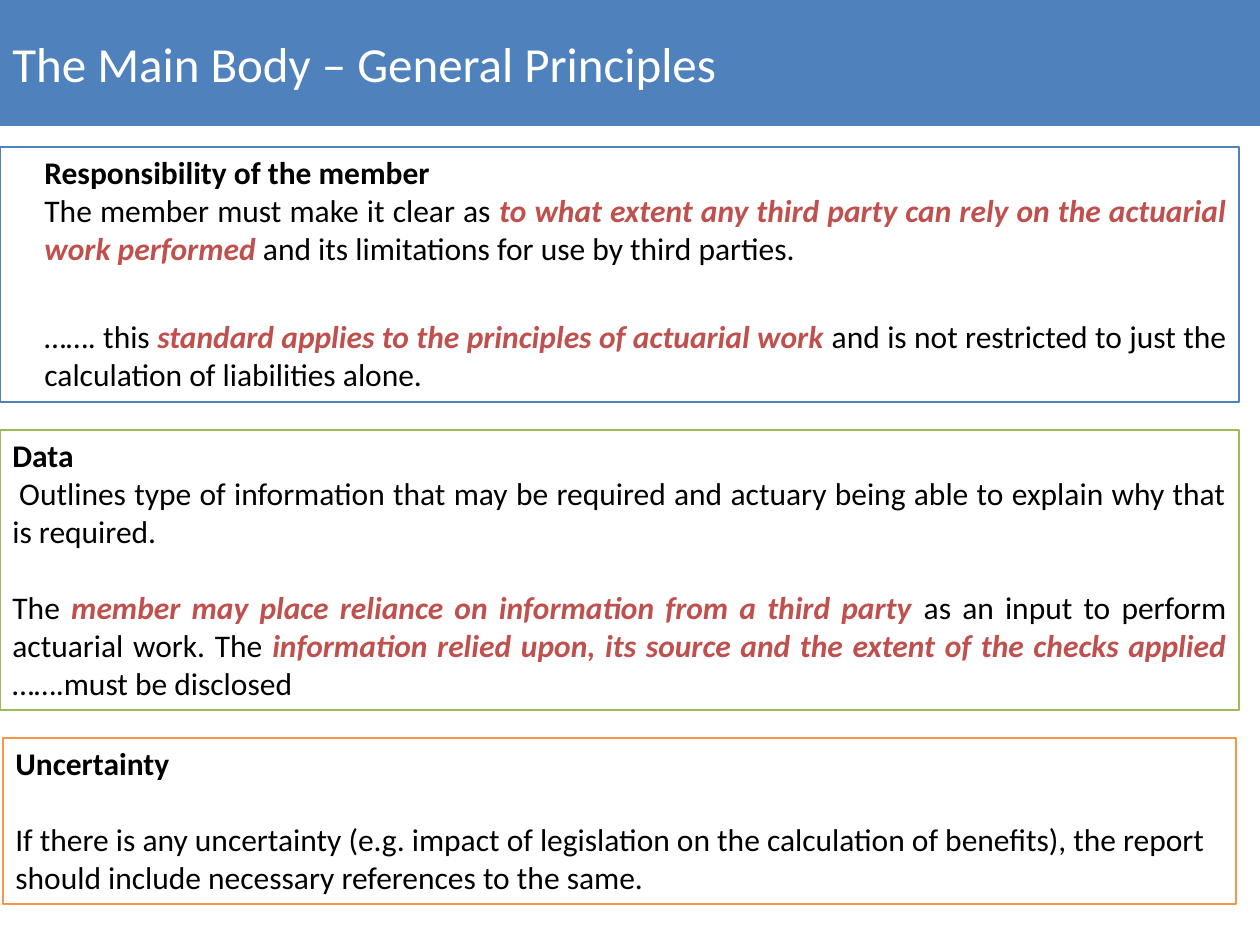
import pptx
import pptx.dml.color
import pptx.enum.shapes
import pptx.enum.text
import pptx.util

PX_PER_INCH = 126
FONT = "Calibri"
BLACK, WHITE, BLUE, RED = "000000", "FFFFFF", "4F81BD", "C0504D"
GREEN, ORANGE = "9BBB59", "F79646"
ALIGN = pptx.enum.text.PP_ALIGN
ANCHOR = pptx.enum.text.MSO_ANCHOR
KEY = {"color": RED, "bold": True, "italic": True}
HEAD = {"bold": True}


def px(length):
    """Turn whole pixels into EMU."""
    return pptx.util.Emu(round(length * 914400 / PX_PER_INCH))


def paint(target, color):
    """Give a fill or a font colour a hex value."""
    target.rgb = pptx.dml.color.RGBColor.from_string(color)


def add_span(para, text, size=18, color=BLACK, bold=False, italic=False):
    """Add one formatted run of text to a paragraph."""
    span = para.add_run()
    span.text = text
    span.font.name = FONT
    span.font.size = pptx.util.Pt(size)
    span.font.bold = bold
    span.font.italic = italic
    paint(span.font.color, color)


def add_box(page, bounds, fill=None, line=None, anchor=ANCHOR.TOP):
    """Add a plain rectangle that wraps its text."""
    box = page.shapes.add_shape(
        pptx.enum.shapes.MSO_SHAPE.RECTANGLE, *(px(side) for side in bounds))
    box.shadow.inherit = False
    if fill:
        box.fill.solid()
        paint(box.fill.fore_color, fill)
    else:
        box.fill.background()
    if line:
        paint(box.line.color, line)
        box.line.width = pptx.util.Pt(0.75)
    else:
        box.line.fill.background()
    box.text_frame.word_wrap = True
    box.text_frame.vertical_anchor = anchor
    return box


def add_title(page, bounds, text):
    """Add the filled title band."""
    box = add_box(page, bounds, fill=BLUE, anchor=ANCHOR.MIDDLE)
    para = box.text_frame.paragraphs[0]
    para.alignment = ALIGN.LEFT
    add_span(para, text, size=28, color=WHITE)


def add_principle(page, bounds, line, paras, align=ALIGN.JUSTIFY, indent=0):
    """Add an outlined box from pairs of space before and formatted spans."""
    frame = add_box(page, bounds, line=line).text_frame
    for index, (gap, spans) in enumerate(paras):
        para = frame.add_paragraph() if index else frame.paragraphs[0]
        para.alignment = align
        para.space_before = pptx.util.Pt(gap)
        if indent:
            para._p.get_or_add_pPr().set("marL", str(px(indent)))
        for text, style in spans:
            add_span(para, text, **style)


def main():
    """Build the slide and save the deck."""
    deck = pptx.Presentation()
    deck.slide_width, deck.slide_height = px(1260), px(945)
    page = deck.slides.add_slide(deck.slide_layouts[6])

    add_title(page, (0, 0, 1260, 126), "The Main Body – General Principles")
    add_principle(page, (0, 147, 1239, 255), BLUE, [
        (0, [("Responsibility of the member", HEAD)]),
        (0, [("The member must make it clear as ", {}),
             ("to what extent any third party can rely on the actuarial "
              "work performed", KEY),
             (" and its limitations for use by third parties. ", {})]),
        (29, [("……. this ", {}),
              ("standard applies to the principles of actuarial work ", KEY),
              ("and is not restricted to just the calculation of "
               "liabilities alone.", {})]),
    ], indent=32)
    add_principle(page, (0, 430, 1239, 280), GREEN, [
        (0, [("Data", HEAD)]),
        (0, [(" ", {"size": 14}),
             ("Outlines type of information that may be required and actuary "
              "being able to explain why that is required.", {})]),
        (22, [("The ", {}),
              ("member may place reliance on information from a third "
               "party ", KEY),
              ("as an input to perform actuarial work. The ", {}),
              ("information relied upon, its source and the extent of the "
               "checks applied ", KEY),
              ("…….must be disclosed", {})]),
    ])
    add_principle(page, (3, 738, 1233, 166), ORANGE, [
        (0, [("Uncertainty", HEAD)]),
        (22, [("If there is any uncertainty (e.g. impact of legislation on "
               "the calculation of benefits), the report should include "
               "necessary references to the same.", {})]),
    ], align=ALIGN.LEFT)

    deck.save("out.pptx")


if __name__ == "__main__":
    main()
